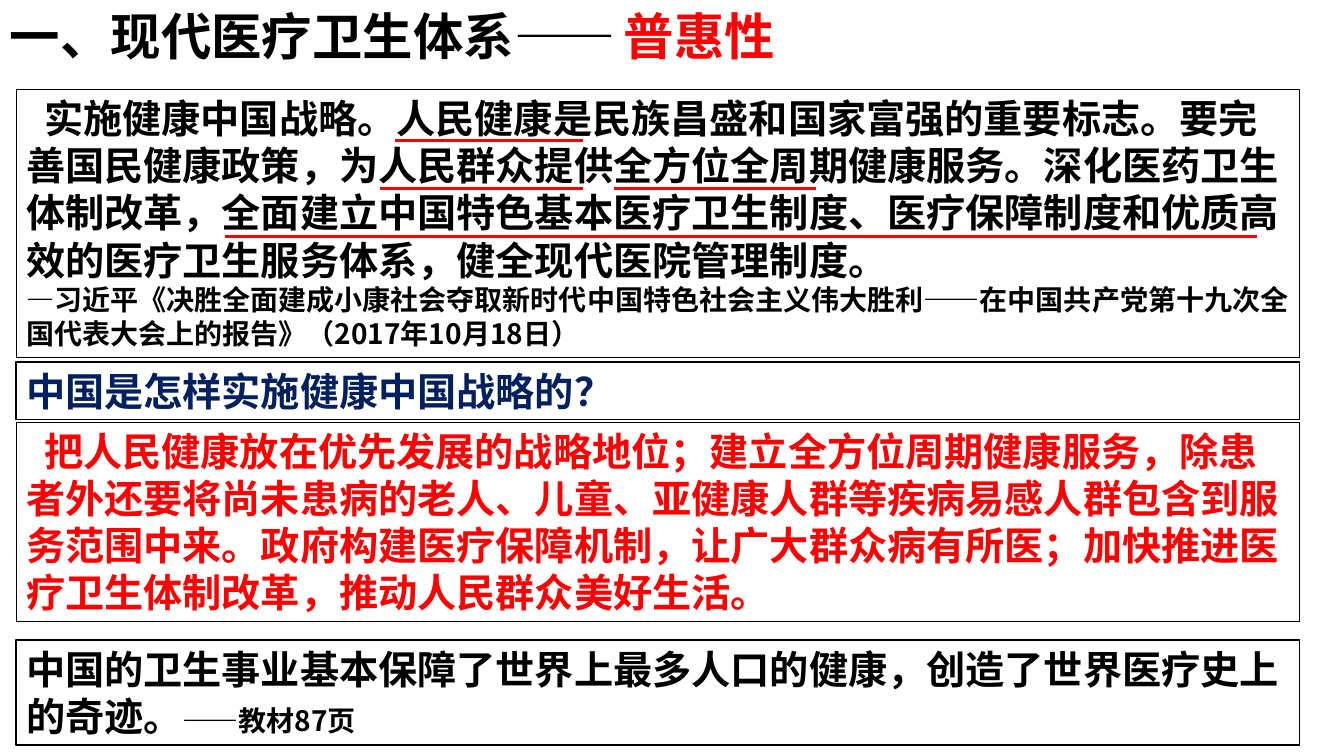
from lxml import etree
from pptx import Presentation
from pptx.dml.color import RGBColor
from pptx.enum.shapes import MSO_CONNECTOR, MSO_SHAPE
from pptx.enum.text import MSO_ANCHOR, MSO_AUTO_SIZE, PP_ALIGN
from pptx.oxml.ns import qn
from pptx.util import Pt

PX = 9144  # EMU per px, 100 px to the inch
SLIDE_W, SLIDE_H = 1333, 750

BLACK = RGBColor(0x00, 0x00, 0x00)
RED = RGBColor(0xFF, 0x00, 0x00)
NAVY = RGBColor(0x00, 0x20, 0x60)

RECT = MSO_SHAPE.RECTANGLE
STRAIGHT = MSO_CONNECTOR.STRAIGHT
LEFT, TOP = PP_ALIGN.LEFT, MSO_ANCHOR.TOP
GROW = MSO_AUTO_SIZE.SHAPE_TO_FIT_TEXT

CJK = "Noto Sans CJK SC"
LATIN = "Calibri"
TITLE_PT, BODY_PT, SOURCE_PT = 36, 28, 20
FIRST_INDENT = 18
PANEL_X, PANEL_W = 16, 1273

POLICY = ("实施健康中国战略。人民健康是民族昌盛和国家富强的重要标志。要完善国民健康政策，"
          "为人民群众提供全方位全周期健康服务。深化医药卫生体制改革，全面建立中国特色基本医疗卫生制度、"
          "医疗保障制度和优质高效的医疗卫生服务体系，健全现代医院管理制度。")
POLICY_SOURCE = ("—习近平《决胜全面建成小康社会夺取新时代中国特色社会主义伟大胜利——"
                 "在中国共产党第十九次全国代表大会上的报告》（2017年10月18日）")
QUESTION = "中国是怎样实施健康中国战略的？"
ANSWER = ("把人民健康放在优先发展的战略地位；建立全方位周期健康服务，除患者外还要将尚未患病的老人、儿童、"
          "亚健康人群等疾病易感人群包含到服务范围中来。政府构建医疗保障机制，让广大群众病有所医；"
          "加快推进医疗卫生体制改革，推动人民群众美好生活。")
ACHIEVEMENT = "中国的卫生事业基本保障了世界上最多人口的健康，创造了世界医疗史上的奇迹。"
TEXTBOOK = "——教材87页"


def emu(*lengths):
    return [length * PX for length in lengths]


def add_run(paragraph, text, size, color, font=CJK):
    run = paragraph.add_run()
    run.text = text
    run.font.size = Pt(size)
    run.font.bold = True
    run.font.color.rgb = color
    run.font.name = font
    east_asian = etree.SubElement(run.font._element, qn("a:ea"))
    east_asian.set("typeface", CJK)


def fill_text(frame, paragraphs, color, font=CJK, wrap=True, indent=0):
    """Each paragraph is a list of (text, size) runs; indent is for the first one."""
    frame.word_wrap = wrap
    frame.auto_size = GROW
    frame.vertical_anchor = TOP
    for number, runs in enumerate(paragraphs):
        paragraph = frame.add_paragraph() if number else frame.paragraphs[0]
        paragraph.alignment = LEFT
        if indent and number == 0:
            paragraph._p.get_or_add_pPr().set("indent", str(indent * PX))
        for text, size in runs:
            add_run(paragraph, text, size, color, font)


def add_title(slide, x, y, height):
    parts = [("一、现代医疗卫生体系——", 0, 676, BLACK, LATIN, True),
             ("普惠性", 609, 170, RED, CJK, False)]
    for text, offset, width, color, font, wrap in parts:
        title = slide.shapes.add_textbox(*emu(x + offset, y, width, height))
        fill_text(title.text_frame, [[(text, TITLE_PT)]], color, font, wrap)


def add_panel(slide, y, height, paragraphs, color, border=0.75, indent=0):
    panel = slide.shapes.add_shape(RECT, *emu(PANEL_X, y, PANEL_W, height))
    panel.shadow.inherit = False
    panel.fill.background()
    panel.line.color.rgb = BLACK
    panel.line.width = Pt(border)
    fill_text(panel.text_frame, paragraphs, color, indent=indent)


def add_underline(slide, x1, x2, y):
    underline = slide.shapes.add_connector(STRAIGHT, *emu(x1, y, x2, y))
    underline.line.color.rgb = RED
    underline.line.width = Pt(2.25)
    etree.SubElement(underline._element.spPr, qn("a:effectLst"))


def add_policy(slide, y, height):
    add_panel(slide, y, height, [[(POLICY, BODY_PT)], [(POLICY_SOURCE, SOURCE_PT)]],
              BLACK, indent=FIRST_INDENT)
    # Key phrases: text line, start and end from the panel's left edge
    first_line, line_pitch = 50, 48
    for row, start, end in [(0, 376, 562), (1, 361, 562), (1, 593, 793), (2, 207, 1231)]:
        add_underline(slide, PANEL_X + start, PANEL_X + end,
                      y + first_line + row * line_pitch)


def main():
    deck = Presentation()
    deck.slide_width, deck.slide_height = emu(SLIDE_W, SLIDE_H)
    slide = deck.slides.add_slide(deck.slide_layouts[6])

    add_title(slide, 0, 0, 71)
    add_policy(slide, 89, 266)
    # Question and its answer
    add_panel(slide, 359, 57, [[(QUESTION, BODY_PT)]], NAVY, border=1)
    add_panel(slide, 419, 198, [[(ANSWER, BODY_PT)]], RED, indent=FIRST_INDENT)
    # Conclusion
    add_panel(slide, 635, 104, [[(ACHIEVEMENT, BODY_PT), (TEXTBOOK, SOURCE_PT)]],
              BLACK, border=1)

    deck.save("out.pptx")


if __name__ == "__main__":
    main()
